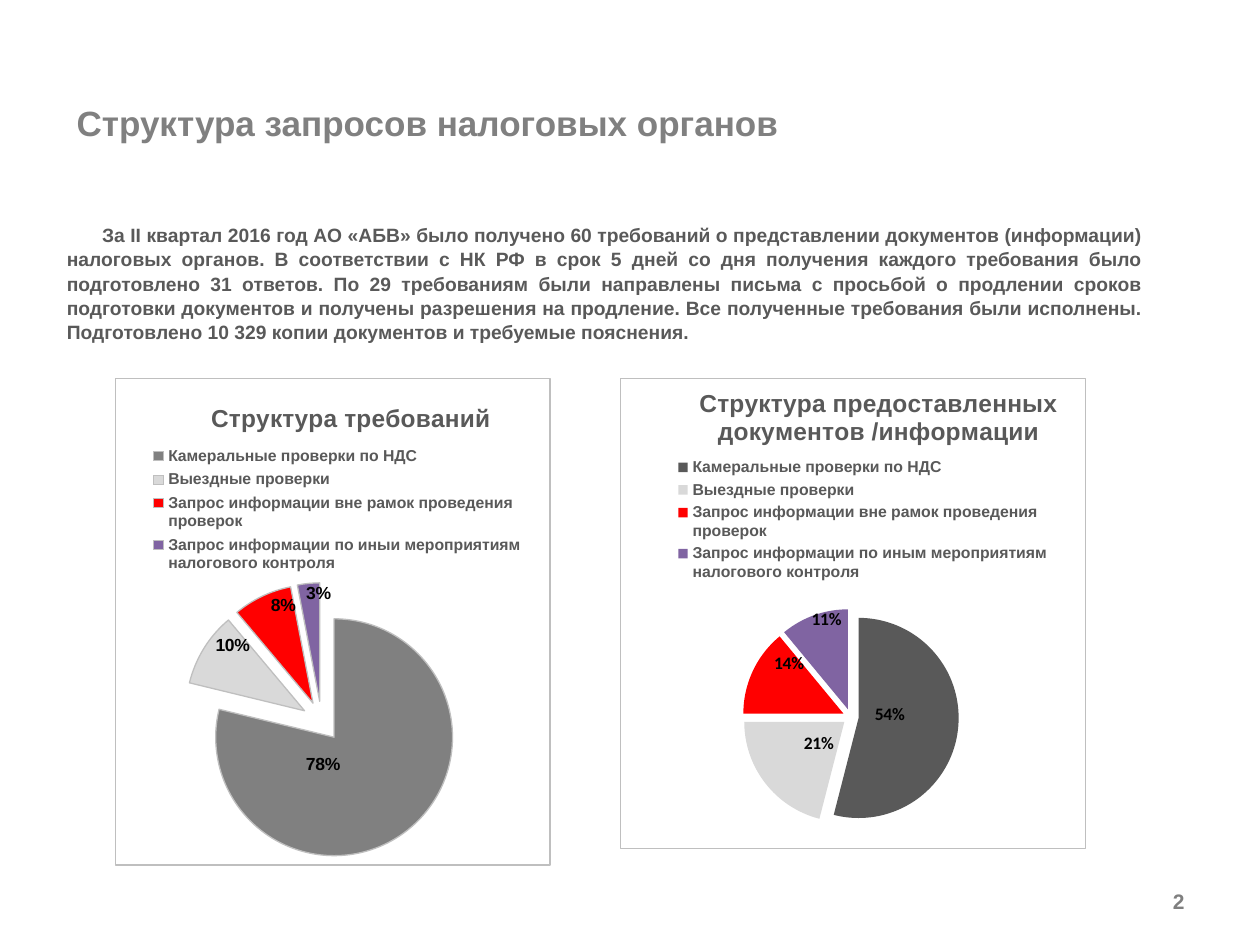
"""Builds a slide with a summary paragraph and two pie charts of tax authority requests."""
from lxml import etree
from pptx import Presentation
from pptx.chart.data import CategoryChartData
from pptx.dml.color import RGBColor
from pptx.enum.chart import XL_CHART_TYPE as ChartType, XL_LABEL_POSITION as LabelPosition
from pptx.enum.chart import XL_LEGEND_POSITION as LegendPosition
from pptx.enum.text import MSO_ANCHOR as Anchor, PP_ALIGN as Align
from pptx.oxml.ns import qn
from pptx.util import Inches, Pt

HEADING = "Структура запросов налоговых органов"
SUMMARY = (
    "За II квартал 2016 год АО «АБВ» было получено 60 требований о представлении документов "
    "(информации) налоговых органов. В соответствии с НК РФ в срок 5 дней со дня получения "
    "каждого требования было подготовлено 31 ответов. По 29 требованиям были направлены письма "
    "с просьбой о продлении сроков подготовки документов и получены разрешения на продление. "
    "Все полученные требования были исполнены. Подготовлено 10 329 копии документов и "
    "требуемые пояснения."
)
GREY, BORDER = "595959", "BFBFBF"
SHARED = ["Камеральные проверки по НДС", "Выездные проверки",
          "Запрос информации вне рамок проведения проверок"]
CHARTS = [
    {
        "title": "Структура требований",
        "categories": SHARED + ["Запрос информации по иныи мероприятиям налогового контроля"],
        "values": [78, 10, 8, 3],
        "colors": ["808080", "D9D9D9", "FF0000", "8064A2"],
        "place": (0.91, 3, 3.46, 3.87),
        "title_at": (0.21, 0.04),
        "legend_at": (0.08, 0.13, 0.86, 0.28),
        "plot_at": (0.02, 0.42, 0.91, 0.57),
        "shifts": [(-0.11, -0.04), (-0.05, -0.07), (-0.01, -0.09), (0.01, -0.1)],
        "explosion": 17, "outline": BORDER, "label_font": "Arial", "overlay": False,
    },
    {
        "title": "Структура предоставленных документов /информации",
        "categories": SHARED + ["Запрос информации по иным мероприятиям налогового контроля"],
        "values": [54, 21, 14, 11],
        "colors": ["595959", "D9D9D9", "FF0000", "8064A2"],
        "place": (4.92, 3, 3.7, 3.74),
        "title_at": (0.16, 0.01),
        "legend_at": (0.11, 0.16, 0.82, 0.28),
        "plot_at": (0.08, 0.49, 0.83, 0.46),
        "shifts": [(-0.04, -0.02), (0.03, -0.02), (-0.02, -0.06), (-0.01, -0.09)],
        "explosion": 8, "outline": None, "label_font": "Calibri", "overlay": True,
    },
]


def rgb(value):
    return RGBColor.from_string(value)


def style(font, size, color=GREY, name="Arial"):
    font.size, font.bold, font.name = Pt(size), True, name
    font.color.rgb = rgb(color)


def write(box, text, place, size, color=GREY, align=Align.LEFT, anchor=Anchor.TOP,
          indent=0, spacing=1.0):
    box.left, box.top, box.width, box.height = map(Inches, place)
    frame = box.text_frame
    frame.word_wrap, frame.vertical_anchor = True, anchor
    para = frame.paragraphs[0]
    para.alignment, para.line_spacing = align, spacing
    if indent:
        para._p.get_or_add_pPr().set("indent", str(Inches(indent)))
    span = para.add_run()
    span.text = text
    style(span.font, size, color)


def element(tag, **attributes):
    node = etree.Element(qn(tag))
    for key, value in attributes.items():
        node.set(key, str(value))
    return node


def layout(place, edge=False, inner=False):
    node = element("c:layout")
    manual = element("c:manualLayout")
    node.append(manual)
    if inner:
        manual.append(element("c:layoutTarget", val="inner"))
    if edge:
        manual.extend([element("c:xMode", val="edge"), element("c:yMode", val="edge")])
    manual.extend([element(f"c:{key}", val=value) for key, value in zip("xywh", place)])
    return node


def set_layout(parent, node, after=None):
    for old in parent.findall(qn("c:layout")):
        parent.remove(old)
    if after is None:
        parent.insert(0, node)
    else:
        parent.find(qn(after)).addnext(node)


def add_border(chart):
    area = chart._chartSpace.find(qn("c:chart"))
    area.addprevious(element("c:roundedCorners", val=0))
    shape = element("c:spPr")
    line = element("a:ln", w=Pt(0.75))
    fill = element("a:solidFill")
    fill.append(element("a:srgbClr", val=BORDER))
    line.append(fill)
    shape.append(line)
    area.addnext(shape)


def format_slices(series, info):
    explosion = element("c:explosion", val=info["explosion"])
    for index, color in enumerate(info["colors"]):
        point = series.points[index]
        point.format.fill.solid()
        point.format.fill.fore_color.rgb = rgb(color)
        if info["outline"]:
            point.format.line.color.rgb = rgb(info["outline"])
            point.format.line.width = Pt(0.75)
        else:
            point.format.line.fill.background()
        label = point.data_label
        style(label.font, 10, "000000", info["label_font"])
        label.position = LabelPosition.CENTER
    for node, shift in zip(series._element.xpath("c:dLbls/c:dLbl"), info["shifts"]):
        set_layout(node, layout(shift), after="c:idx")
        node.find(qn("c:layout")).addnext(
            element("c:numFmt", formatCode='0"%"', sourceLinked=0))
    for node in series._element.findall(qn("c:dPt")):
        shape = node.find(qn("c:spPr"))
        shape.addprevious(element("c:explosion", val=info["explosion"]))
    series._element.find(qn("c:dPt")).addprevious(explosion)


def add_pie(page, info):
    data = CategoryChartData()
    data.categories = info["categories"]
    data.add_series("Series 1", info["values"])
    chart = page.shapes.add_chart(ChartType.PIE, *map(Inches, info["place"]), data).chart
    style(chart.font, 10)
    chart.has_title = True
    span = chart.chart_title.text_frame.paragraphs[0].add_run()
    span.text = info["title"]
    style(span.font, 14)
    set_layout(chart.chart_title._element, layout(info["title_at"], edge=True), after="c:tx")
    chart.has_legend = True
    legend = chart.legend
    legend.position = LegendPosition.TOP
    legend.include_in_layout = info["overlay"]
    style(legend.font, 9)
    set_layout(legend._element, layout(info["legend_at"], edge=True), after="c:legendPos")
    plot = chart.plots[0]
    plot.vary_by_categories = True
    format_slices(plot.series[0], info)
    area = chart._chartSpace.xpath("c:chart/c:plotArea")[0]
    set_layout(area, layout(info["plot_at"], edge=True, inner=True))
    add_border(chart)


def main():
    deck = Presentation()
    deck.slide_width, deck.slide_height = Inches(10), Inches(7.5)
    page = deck.slides.add_slide(deck.slide_layouts[5])
    write(page.shapes.title, SUMMARY, (0.43, 1.62, 8.74, 1.25), 11, align=Align.JUSTIFY,
          anchor=Anchor.MIDDLE, indent=0.28, spacing=1.05)
    for info in CHARTS:
        add_pie(page, info)
    for text, place, size, options in [
        ("2", (7.17, 6.95, 2.33, 0.4), 12,
         {"color": "7F7F7F", "align": Align.RIGHT, "anchor": Anchor.MIDDLE}),
        (HEADING, (0.51, 0.76, 8.74, 0.74), 20, {"color": "808080"}),
    ]:
        write(page.shapes.add_textbox(0, 0, 0, 0), text, place, size, **options)
    deck.save("out.pptx")


if __name__ == "__main__":
    main()
